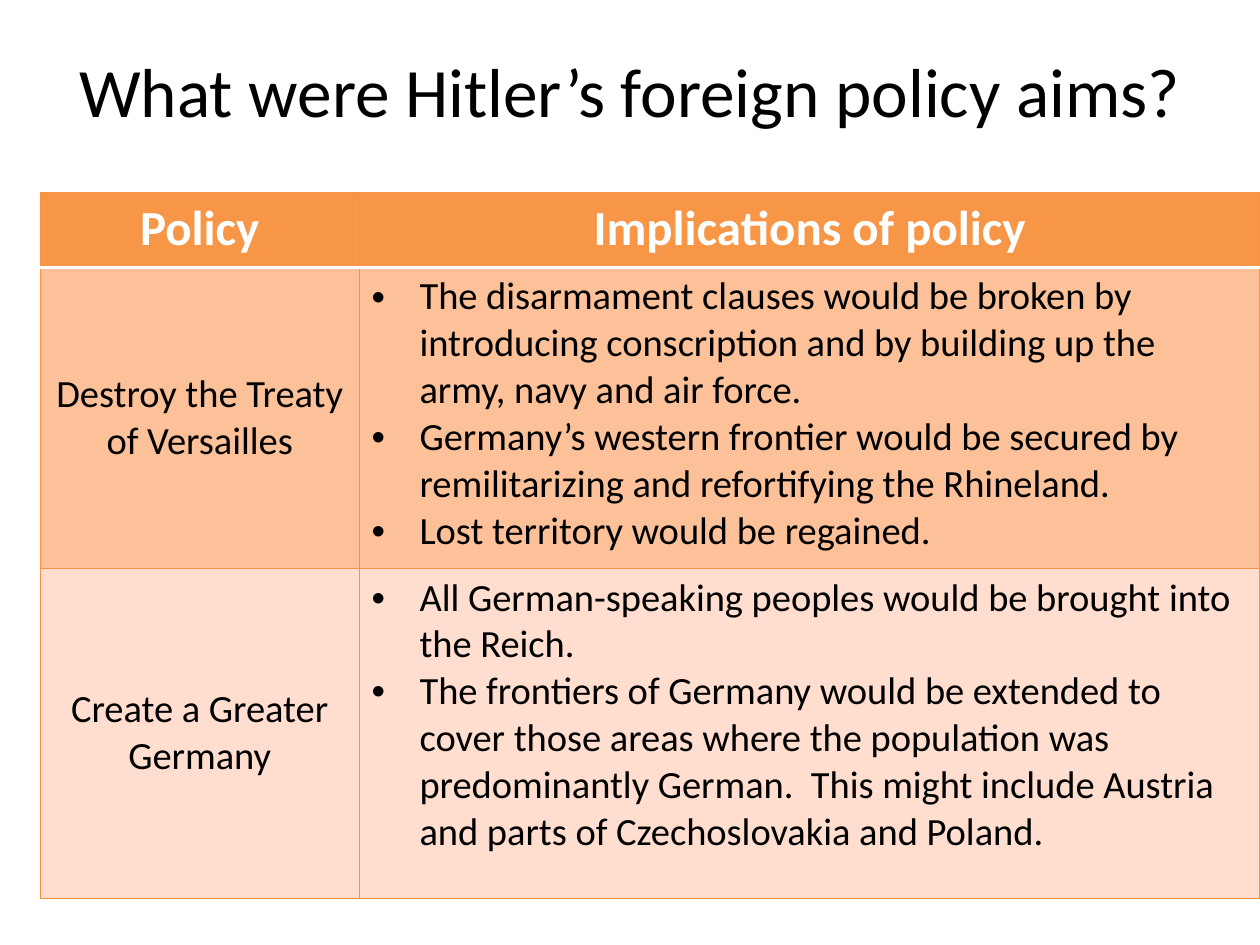
from dataclasses import dataclass

import lxml.etree
import pptx
import pptx.dml.color
import pptx.enum.text
import pptx.oxml.ns
import pptx.util

Inches = pptx.util.Inches
Pt = pptx.util.Pt
Align = pptx.enum.text.PP_ALIGN
Anchor = pptx.enum.text.MSO_ANCHOR
qn = pptx.oxml.ns.qn


@dataclass(frozen=True)
class Theme:
    font: str = "Calibri"
    text: str = "000000"
    header_text: str = "FFFFFF"
    header_fill: str = "F79646"
    row_fills: tuple = ("FCC199", "FFDDCF")
    border: str = "F69240"
    title_size: float = 39.6
    header_size: float = 28
    body_size: float = 22
    border_width: float = 0.75
    header_rule_width: float = 2


THEME = Theme()

TITLE = "What were Hitler’s foreign policy aims?"
HEADERS = ("Policy", "Implications of policy")
POLICIES = (
    (
        "Destroy the Treaty of Versailles",
        (
            "The disarmament clauses would be broken by introducing conscription "
            "and by building up the army, navy and air force.",
            "Germany’s western frontier would be secured by remilitarizing and "
            "refortifying the Rhineland.",
            "Lost territory would be regained.",
        ),
    ),
    (
        "Create a Greater Germany",
        (
            "All German-speaking peoples would be brought into the Reich.",
            "The frontiers of Germany would be extended to cover those areas where "
            "the population was predominantly German.  This might include Austria "
            "and parts of Czechoslovakia and Poland.",
        ),
    ),
)


def rgb(color):
    return pptx.dml.color.RGBColor.from_string(color)


def write_text(text_frame, lines, size, color=THEME.text, bold=False,
               align=Align.CENTER, bullet=False):
    """Fill a text frame with one paragraph for each line."""
    for index, line in enumerate(lines):
        paragraph = text_frame.paragraphs[0] if index == 0 else text_frame.add_paragraph()
        paragraph.alignment = align
        run = paragraph.add_run()
        run.text = line
        run.font.name = THEME.font
        run.font.size = Pt(size)
        run.font.bold = bold
        run.font.color.rgb = rgb(color)
        if bullet:
            add_bullet(paragraph)


def add_bullet(paragraph, indent=Inches(0.38)):
    properties = paragraph._p.get_or_add_pPr()
    properties.set("marL", str(indent))
    properties.set("indent", str(-indent))
    lxml.etree.SubElement(properties, qn("a:buFont"), typeface="Arial")
    lxml.etree.SubElement(properties, qn("a:buChar"), char="•")


def add_border(cell, side, color, width):
    """Draw one side of a cell: L, R, T or B, called in that order."""
    line = lxml.etree.SubElement(
        cell._tc.get_or_add_tcPr(), qn(f"a:ln{side}"), w=str(Pt(width)))
    fill = lxml.etree.SubElement(line, qn("a:solidFill"))
    lxml.etree.SubElement(fill, qn("a:srgbClr"), val=color)


def format_cell(cell, fill, row_index):
    # The rule below the header is shared by rows 0 and 1.
    rule_side = {0: "B", 1: "T"}.get(row_index)
    for side in "LRTB":
        if side == rule_side:
            add_border(cell, side, THEME.header_text, THEME.header_rule_width)
        else:
            add_border(cell, side, THEME.border, THEME.border_width)
    cell.fill.solid()
    cell.fill.fore_color.rgb = rgb(fill)


def add_title(slide, left, top, width, height):
    title = slide.shapes.title
    title.left, title.top, title.width, title.height = left, top, width, height
    title.text_frame.vertical_anchor = Anchor.MIDDLE
    write_text(title.text_frame, [TITLE], THEME.title_size)


def add_policy_table(slide, left, top, width, height):
    table = slide.shapes.add_table(
        len(POLICIES) + 1, len(HEADERS), left, top, width, height).table
    policy_width = Inches(2.53)
    table.columns[0].width = policy_width
    table.columns[1].width = width - policy_width
    header_height, first_height = Inches(0.59), Inches(2.39)
    row_heights = (header_height, first_height, height - header_height - first_height)
    for row, row_height in zip(table.rows, row_heights):
        row.height = row_height

    for column, header in enumerate(HEADERS):
        cell = table.cell(0, column)
        format_cell(cell, THEME.header_fill, 0)
        write_text(cell.text_frame, [header], THEME.header_size,
                   color=THEME.header_text, bold=True)

    for row, (policy, implications) in enumerate(POLICIES, start=1):
        policy_cell, implications_cell = table.cell(row, 0), table.cell(row, 1)
        for cell in (policy_cell, implications_cell):
            format_cell(cell, THEME.row_fills[row - 1], row)
        policy_cell.vertical_anchor = Anchor.MIDDLE
        write_text(policy_cell.text_frame, [policy], THEME.body_size)
        write_text(implications_cell.text_frame, implications, THEME.body_size,
                   align=Align.LEFT, bullet=True)


def main():
    presentation = pptx.Presentation()
    presentation.slide_width = Inches(10)
    presentation.slide_height = Inches(7.5)
    title_only = presentation.slide_layouts.get_by_name("Title Only")
    slide = presentation.slides.add_slide(title_only)
    add_title(slide, Inches(0.5), Inches(0.19), Inches(9), Inches(1.05))
    add_policy_table(slide, Inches(0.32), Inches(1.53), Inches(9.68), Inches(5.6))
    presentation.save("out.pptx")


if __name__ == "__main__":
    main()
